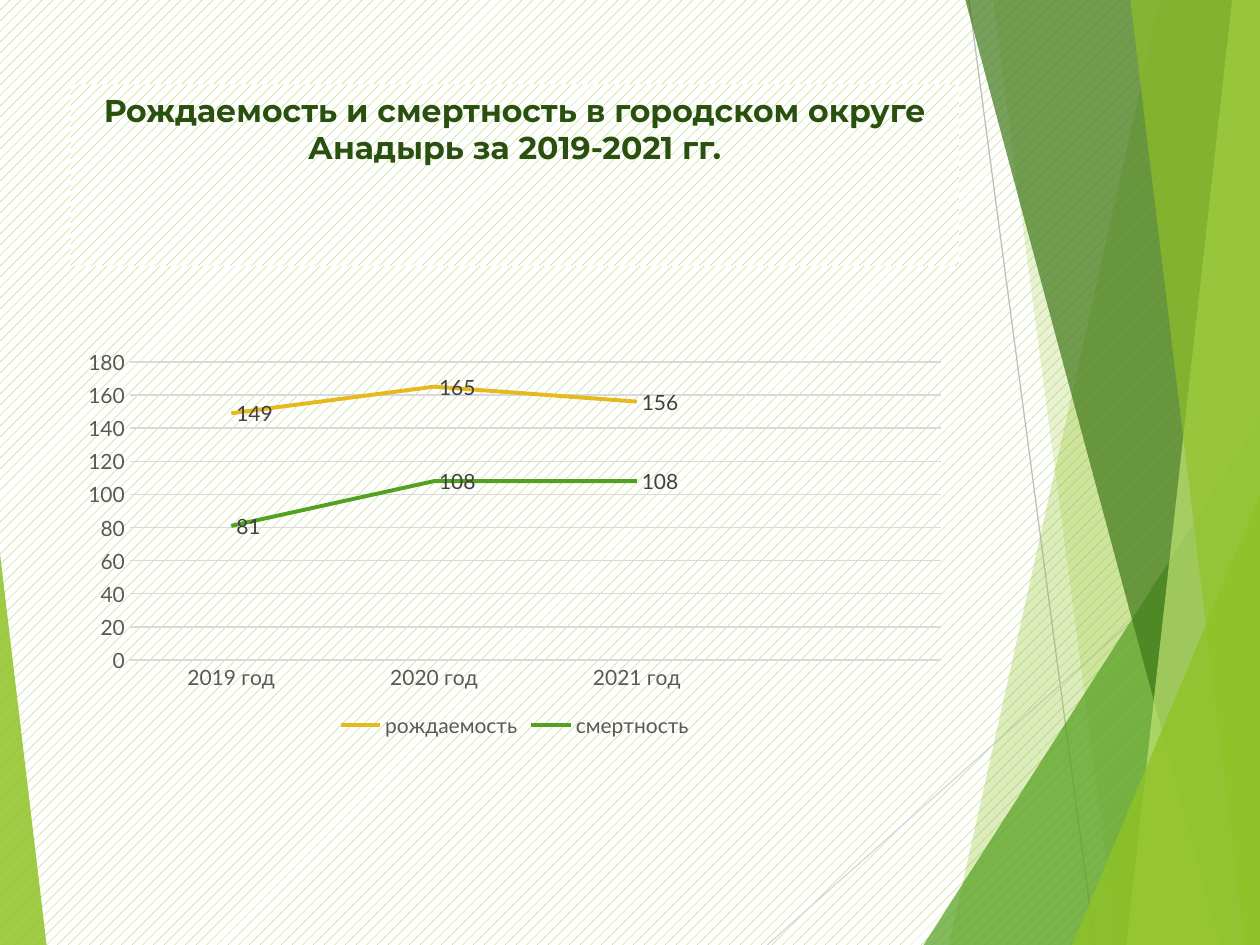
import pptx
import pptx.chart.data
import pptx.dml.color
import pptx.enum.chart
import pptx.enum.dml
import pptx.enum.shapes
import pptx.enum.text
import pptx.oxml
import pptx.oxml.ns
import pptx.util

COLORS = {
    "lime": "90C226", "green": "54A021", "forest": "3F7819", "pale": "C0E474",
    "gold": "E6B91E", "title": "2A5010", "white": "FFFFFF", "line": "BFBFBF",
    "grid": "D9D9D9", "axis": "595959", "label": "404040",
}
RGB = {name: pptx.dml.color.RGBColor.from_string(h) for name, h in COLORS.items()}

prs = pptx.Presentation()
prs.slide_width, prs.slide_height = pptx.util.Inches(10), pptx.util.Inches(7.5)
s = prs.slides.add_slide(prs.slide_layouts[5])
tree = s.shapes._spTree


def place(x, y):
    """Turn percentages of the slide's width and height into lengths."""
    return round(prs.slide_width * x / 100), round(prs.slide_height * y / 100)


def style_font(font, color, size=12, name="Lato", bold=False):
    font.name, font.size, font.bold = name, pptx.util.Pt(size), bold
    font.color.rgb = RGB[color]


# Title, on the same pattern as the background
title = s.shapes.title
title.left, title.top = place(5.6, 8.93)
title.width, title.height = place(70.5, 19.2)
for fill in (s.background.fill, title.fill):
    fill.patterned()
    fill.pattern = pptx.enum.dml.MSO_PATTERN.PERCENT_20
    fill.fore_color.rgb = RGB["lime"]
    fill.back_color.rgb = RGB["white"]
tf = title.text_frame
tf.text = "Рождаемость и смертность в городском округе Анадырь за 2019-2021 гг."
tf.word_wrap = True
tf.auto_size = pptx.enum.text.MSO_AUTO_SIZE.NONE
tf.vertical_anchor = pptx.enum.text.MSO_ANCHOR.TOP
p = tf.paragraphs[0]
p.alignment = pptx.enum.text.PP_ALIGN.CENTER
style_font(p.font, "title", 18, "Montserrat", True)

# Thin lines behind the facets
for start, end, color in [((76.9, 0), (86.9, 100), "line"),
                          ((100, 53.73), (60.9, 100), "grid")]:
    line = s.shapes.add_connector(pptx.enum.shapes.MSO_CONNECTOR.STRAIGHT,
                                  *place(*start), *place(*end))
    line.line.color.rgb = RGB[color]
    line.line.width = pptx.util.Pt(0.75)
    line._element.spPr.append(pptx.oxml.parse_xml(
        f"<a:effectLst {pptx.oxml.ns.nsdecls('a')}/>"))

# Facets: a band runs from (top x, bottom x) to the right edge;
# a triangle has (left, top, width) and stands on the bottom edge.
FACETS = [
    ("band", (92.1, 75.3), "lime", 30),
    ("band", (78.8, 88.7), "lime", 20),
    ("triangle", (73.3, 44.4, 26.7), "green", 72),
    ("band", (76.6, 96.8), "forest", 70),
    ("band", (97.8, 89.4), "pale", 70),
    ("band", (89.7, 98.8), "lime", 65),
    ("triangle", (85.1, 52.4, 14.9), "lime", 80),
    ("triangle", (0, 58.53, 3.7), "lime", 85),
]
for kind, geometry, color, opacity in FACETS:
    if kind == "band":
        top, bottom = geometry
        builder = s.shapes.build_freeform(*place(top, -0.1))
        builder.add_line_segments([place(100, -0.1), place(100, 100), place(bottom, 100)])
        sp = builder.convert_to_shape()
    else:
        left, top, width = geometry
        sp = s.shapes.add_shape(pptx.enum.shapes.MSO_SHAPE.ISOSCELES_TRIANGLE,
                                *place(left, top), *place(width, 100 - top))
        sp.adjustments[0] = 1 if left else 0
    sp.shadow.inherit = False
    sp.line.fill.background()
    sp.fill.solid()
    sp.fill.fore_color.rgb = RGB[color]
    rgb = sp._element.spPr.find(".//" + pptx.oxml.ns.qn("a:srgbClr"))
    rgb.append(pptx.oxml.parse_xml(
        f"<a:alpha {pptx.oxml.ns.nsdecls('a')} val=\"{opacity * 1000}\"/>"))
tree.append(title._element)

# Line chart; the fourth category is empty
data = pptx.chart.data.CategoryChartData()
data.categories = ["2019 год", "2020 год", "2021 год", ""]
data.add_series("рождаемость", [149, 165, 156, None])
data.add_series("смертность", [81, 108, 108, None])
chart = s.shapes.add_chart(pptx.enum.chart.XL_CHART_TYPE.LINE, *place(5.6, 36.13),
                           *place(70.5, 42.4), data).chart
chart.has_title = False
chart.font.name, chart.font.size = "Lato", pptx.util.Pt(10)
chart.has_legend = True
chart.legend.position = pptx.enum.chart.XL_LEGEND_POSITION.BOTTOM
chart.legend.include_in_layout = False
style_font(chart.legend.font, "axis")

for axis in (chart.category_axis, chart.value_axis):
    axis.major_tick_mark = axis.minor_tick_mark = pptx.enum.chart.XL_TICK_MARK.NONE
    style_font(axis.tick_labels.font, "axis")
chart.value_axis.format.line.fill.background()
for line in (chart.category_axis.format.line, chart.value_axis.major_gridlines.format.line):
    line.color.rgb = RGB["grid"]
    line.width = pptx.util.Pt(0.75)

chart.plots[0].vary_by_categories = False
for series, color in zip(chart.plots[0].series, ("gold", "green")):
    series.smooth = False
    series.marker.style = pptx.enum.chart.XL_MARKER_STYLE.NONE
    series.format.line.color.rgb = RGB[color]
    series.format.line.width = pptx.util.Pt(2.25)
    labels = series.data_labels
    labels.show_value = True
    labels.position = pptx.enum.chart.XL_LABEL_POSITION.RIGHT
    style_font(labels.font, "label")

prs.save("out.pptx")
